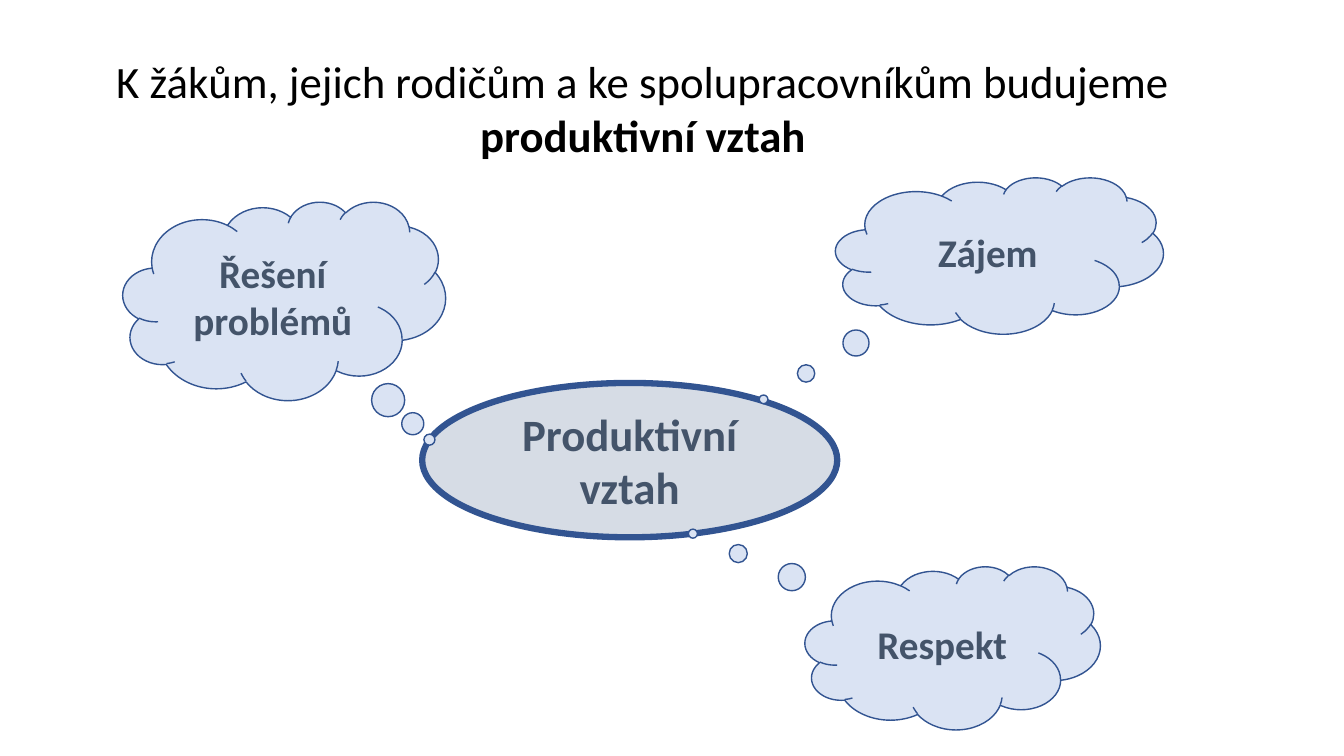
from pptx import Presentation
from pptx.dml.color import RGBColor
from pptx.enum.shapes import MSO_SHAPE
from pptx.enum.text import MSO_ANCHOR, MSO_AUTO_SIZE, PP_ALIGN
from pptx.util import Cm, Pt

COLOURS = {
    "title": "000000",
    "label": "44546A",
    "outline": "325491",
    "centre": "D6DCE5",
    "cloud": "DAE3F3",
}
CLOUDS = [
    ("Zájem", (21.06, 4.47, 8.26, 3.94), (-0.72, 0.92)),
    ("Respekt", (20.29, 14.27, 7.44, 4.11), (-0.88, -0.7)),
    ("Řešení problémů", (3.1, 5.08, 8.13, 5), (0.45, 0.7)),
]


def colour(name):
    """Return the named colour of the palette."""
    return RGBColor.from_string(COLOURS[name])


def set_all(target, values):
    """Set every attribute of the dict on the target."""
    for name, value in values.items():
        setattr(target, name, value)


def add_span(para, text, size, colour_name, bold):
    """Add a formatted piece of text to a paragraph."""
    span = para.add_run()
    span.text = text
    set_all(span.font, {"name": "Calibri", "size": Pt(size), "bold": bold})
    span.font.color.rgb = colour(colour_name)


def fill_title(page):
    """Place the title and write its plain and bold parts."""
    title = page.shapes.title
    set_all(title, {"left": Cm(1.55), "top": Cm(1.22),
                    "width": Cm(29.31), "height": Cm(3)})
    set_all(title.text_frame, {"word_wrap": True, "auto_size": MSO_AUTO_SIZE.NONE,
                               "vertical_anchor": MSO_ANCHOR.TOP})
    para = title.text_frame.paragraphs[0]
    para.alignment = PP_ALIGN.CENTER
    add_span(para, "K žákům, jejich rodičům a ke spolupracovníkům budujeme ",
             32, "title", False)
    add_span(para, "produktivní vztah", 32, "title", True)


def add_bubble(page, kind, text, place, fill, line_width, size):
    """Draw an outlined shape with a centred bold label."""
    bubble = page.shapes.add_shape(kind, *map(Cm, place))
    bubble.shadow.inherit = False
    bubble.fill.solid()
    bubble.fill.fore_color.rgb = colour(fill)
    bubble.line.color.rgb = colour("outline")
    bubble.line.width = Pt(line_width)
    set_all(bubble.text_frame, {"word_wrap": True,
                                "vertical_anchor": MSO_ANCHOR.MIDDLE})
    para = bubble.text_frame.paragraphs[0]
    para.alignment = PP_ALIGN.CENTER
    add_span(para, text, size, "label", True)
    return bubble


def add_cloud(page, text, place, tail):
    """Draw a thought cloud whose tail ends at the given offset."""
    cloud = add_bubble(page, MSO_SHAPE.CLOUD_CALLOUT, text, place, "cloud", 1, 28)
    for index, offset in enumerate(tail):
        cloud.adjustments[index] = offset


def main():
    """Build the slide and save the deck."""
    deck = Presentation()
    set_all(deck, {"slide_width": Cm(33.87), "slide_height": Cm(19.05)})
    page = deck.slides.add_slide(deck.slide_layouts.get_by_name("Title Only"))
    fill_title(page)
    add_bubble(page, MSO_SHAPE.OVAL, "Produktivní vztah",
               (10.64, 9.65, 10.46, 3.89), "centre", 4.5, 32)
    for text, place, tail in CLOUDS:
        add_cloud(page, text, place, tail)
    deck.save("out.pptx")


if __name__ == "__main__":
    main()
